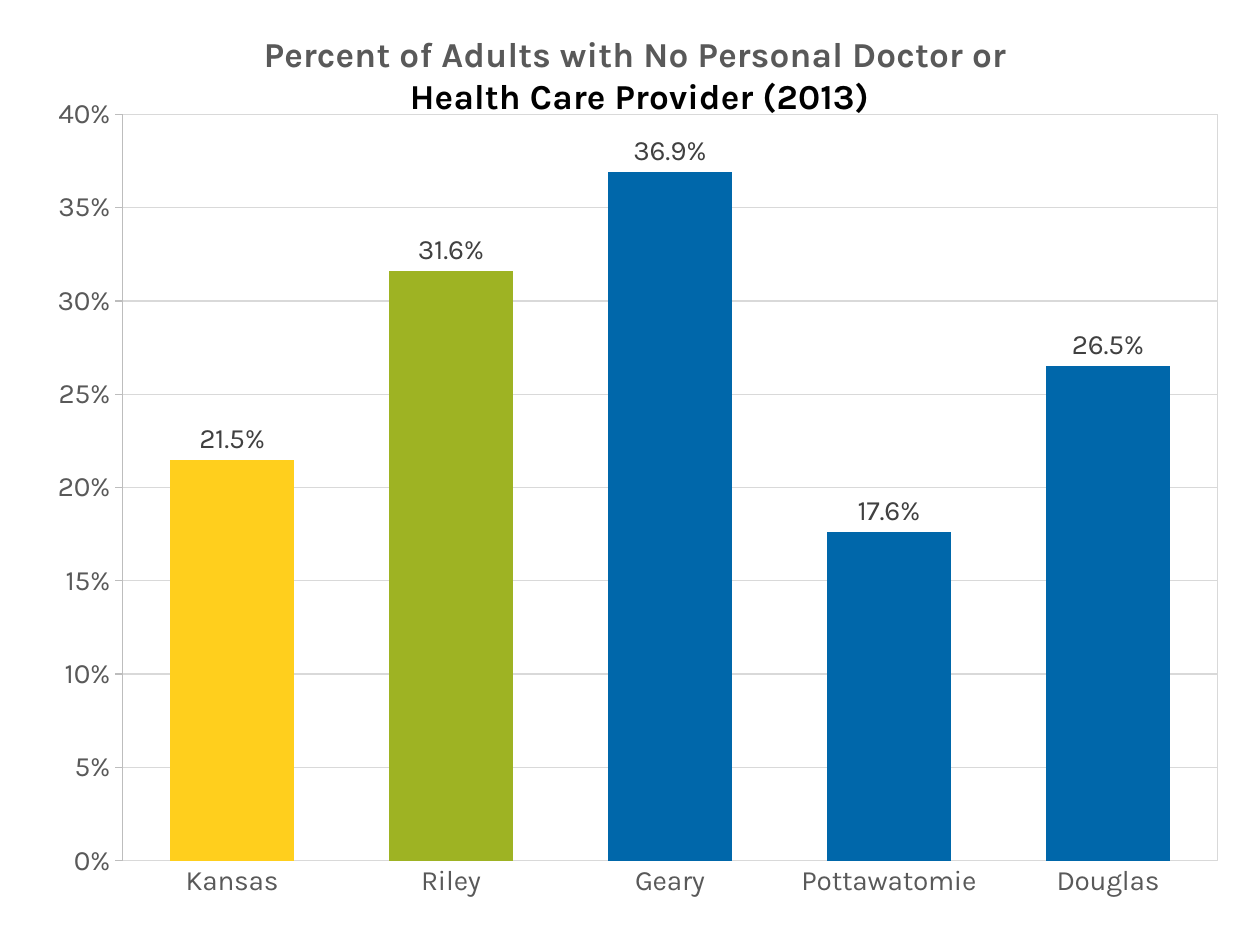
from lxml import etree
from pptx import Presentation
from pptx.chart.data import CategoryChartData
from pptx.dml.color import RGBColor
from pptx.enum import chart as ch, text
from pptx.oxml import parse_xml
from pptx.oxml.ns import nsdecls, qn
from pptx.util import Inches, Pt

# Content
TITLE = [("Percent of Adults with No Personal Doctor or ", "muted"),
         ("Health Care Provider (2013)", "black")]
COUNTIES = [("Kansas", 0.215, "yellow"), ("Riley", 0.316, "green"),
            ("Geary", 0.369, "blue"), ("Pottawatomie", 0.176, "blue"),
            ("Douglas", 0.265, "blue")]

THEME = {
    "font": "Karla", "base_font": "Cabin",
    "title_size": 20, "label_size": 16, "base_size": 10, "line": 0.75,
    "muted": "595959", "black": "000000", "value": "404040",
    "grid": "D9D9D9", "axis": "BDBDBD", "series": "066243",
    "yellow": "FFCF1D", "green": "9EB323", "blue": "0067AA",
}


def rgb(name):
    return RGBColor.from_string(THEME[name])


def style_font(font, size, color, face="font", bold=False):
    font.name, font.size, font.bold = THEME[face], Pt(THEME[size]), bold
    font.color.rgb = rgb(color)


def style_line(line, color):
    line.color.rgb = rgb(color)
    line.width = Pt(THEME["line"])


def set_layout(parent, index, **values):
    """Place a chart part by fractions of the chart area."""
    for old in parent.findall(qn("c:layout")):
        parent.remove(old)
    layout = parse_xml(f"<c:layout {nsdecls('c')}><c:manualLayout/></c:layout>")
    for tag, value in values.items():
        etree.SubElement(layout[0], qn(f"c:{tag}")).set("val", str(value))
    parent.insert(index, layout)


prs = Presentation()
prs.slide_width, prs.slide_height = Inches(10), Inches(7.5)
s = prs.slides.add_slide(prs.slide_layouts[6])

# Chart
data = CategoryChartData(number_format="0.0%")
data.categories = [name for name, _, _ in COUNTIES]
data.add_series("Series 1", [value for _, value, _ in COUNTIES])
chart = s.shapes.add_chart(ch.XL_CHART_TYPE.COLUMN_CLUSTERED, Inches(0.08), 0,
                           Inches(9.92), Inches(7.5), data).chart
style_font(chart.font, "base_size", "black", "base_font")
chart.has_legend = False

# Title
chart.has_title = True
tf = chart.chart_title.text_frame
for i, (line, color) in enumerate(TITLE):
    p = tf.paragraphs[0] if i == 0 else tf.add_paragraph()
    p.text = line
    p.alignment = text.PP_ALIGN.CENTER
    style_font(p.runs[0].font, "title_size", color, bold=True)
set_layout(chart.chart_title._element, 1, xMode="edge", yMode="edge", x=0.2, y=0.03)

# Plot area with a thin frame
plot_area = chart._chartSpace.chart.plotArea
set_layout(plot_area, 0, layoutTarget="inner", xMode="edge", yMode="edge",
           x=0.09, y=0.121, w=0.876, h=0.79)
plot_area.append(parse_xml(
    f'<c:spPr {nsdecls("c", "a")}><a:noFill/><a:ln w="{Pt(THEME["line"])}"><a:solidFill>'
    f'<a:srgbClr val="{THEME["grid"]}"/></a:solidFill></a:ln></c:spPr>'))

# Axes
for axis, line, tick in ((chart.category_axis, "grid", ch.XL_TICK_MARK.NONE),
                         (chart.value_axis, "axis", ch.XL_TICK_MARK.OUTSIDE)):
    style_font(axis.tick_labels.font, "label_size", "muted")
    style_line(axis.format.line, line)
    axis.major_tick_mark, axis.minor_tick_mark = tick, ch.XL_TICK_MARK.NONE
values = chart.value_axis
values.minimum_scale, values.maximum_scale, values.major_unit = 0, 0.4, 0.05
values.tick_labels.number_format = "0%"
values.tick_labels.number_format_is_linked = False
values.has_major_gridlines = True
style_line(values.major_gridlines.format.line, "grid")

# Columns and value labels
plot = chart.plots[0]
plot.gap_width, plot.vary_by_categories = 77, False
series = plot.series[0]
series.format.fill.solid()
series.format.fill.fore_color.rgb = rgb("series")
for i, (_, _, color) in enumerate(COUNTIES):
    fill = series.points[i].format.fill
    fill.solid()
    fill.fore_color.rgb = rgb(color)
labels = series.data_labels
labels.show_value = True
labels.number_format, labels.number_format_is_linked = "0.0%", False
labels.position = ch.XL_LABEL_POSITION.OUTSIDE_END
style_font(labels.font, "label_size", "value")

prs.save("out.pptx")
